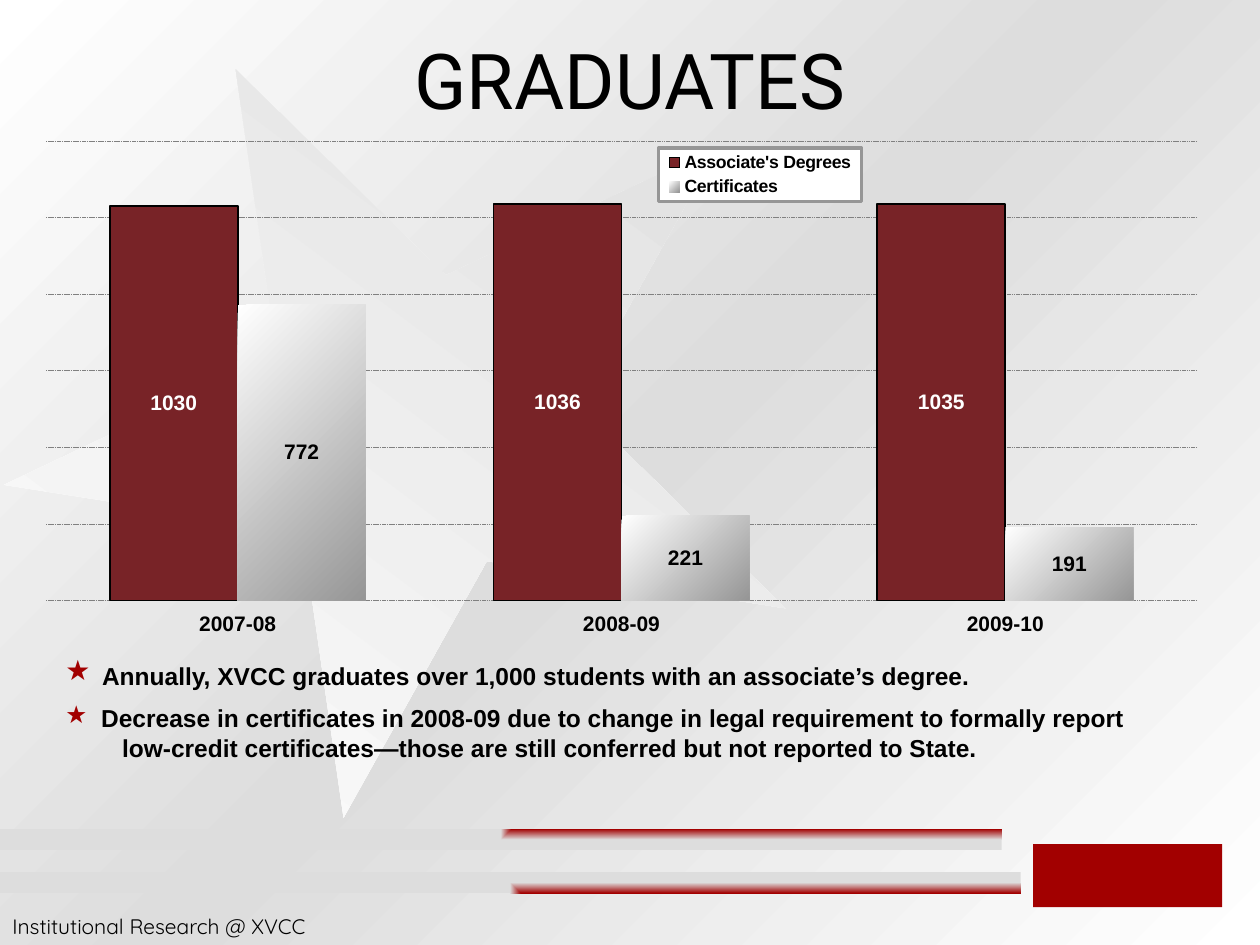
from pptx import Presentation
from pptx.chart.data import CategoryChartData
from pptx.dml.color import RGBColor
from pptx.enum.chart import (XL_CHART_TYPE, XL_LABEL_POSITION, XL_LEGEND_POSITION,
                             XL_TICK_LABEL_POSITION, XL_TICK_MARK)
from pptx.enum.dml import MSO_LINE
from pptx.enum.shapes import MSO_SHAPE
from pptx.enum.text import MSO_ANCHOR, PP_ALIGN
from pptx.oxml import parse_xml
from pptx.oxml.ns import nsdecls, qn
from pptx.util import Inches, Pt

COLUMN = XL_CHART_TYPE.COLUMN_CLUSTERED
CENTRE = XL_LABEL_POSITION.CENTER
RIGHT = XL_LEGEND_POSITION.RIGHT
LOW, BLANK = XL_TICK_LABEL_POSITION.LOW, XL_TICK_LABEL_POSITION.NONE
CROSS, NONE = XL_TICK_MARK.CROSS, XL_TICK_MARK.NONE
DASH = MSO_LINE.SQUARE_DOT
STAR, RECT = MSO_SHAPE.STAR_5_POINT, MSO_SHAPE.RECTANGLE
MIDDLE, MID, LEFT = MSO_ANCHOR.MIDDLE, PP_ALIGN.CENTER, PP_ALIGN.LEFT

COLS, ROWS = 100, 75
BLACK, WHITE, RED, WINE = "000000", "FFFFFF", "A20000", "782327"
PALE, GREY = "DDDDDD", "969696"


def rgb(code):
    return RGBColor.from_string(code)


def blend(node, tones, angle=45, focus=None):
    last = len(tones) - 1
    stops = "".join(f'<a:gs pos="{100000 * i // last}"><a:srgbClr val="{tone}"/></a:gs>'
                    for i, tone in enumerate(tones))
    way = f'<a:lin ang="{angle * 60000}" scaled="0"/>'
    if focus:
        sides = " ".join(f'{side}="{share * 1000}"' for side, share in zip("ltrb", focus))
        way = f'<a:path path="rect"><a:fillToRect {sides}/></a:path>'
    plain = next(node.iter(qn("a:solidFill")))
    plain.getparent().replace(plain, parse_xml(
        f'<a:gradFill {nsdecls("a")} rotWithShape="1"><a:gsLst>{stops}</a:gsLst>{way}</a:gradFill>'))


def layout(node, after, spot, inner=False):
    for old in node.findall(qn("c:layout")):
        node.remove(old)
    target = '<c:layoutTarget val="inner"/>' if inner else ""
    modes = '<c:xMode val="edge"/><c:yMode val="edge"/>'
    sizes = "".join(f'<c:{key} val="{val}"/>' for key, val in zip("xywh", spot))
    part = parse_xml(f'<c:layout {nsdecls("c")}><c:manualLayout>{target}{modes}{sizes}'
                     '</c:manualLayout></c:layout>')
    if after:
        node.find(qn(after)).addnext(part)
    else:
        node.insert(0, part)


class Deck:
    def __init__(self):
        self.show = Presentation()
        self.show.slide_width, self.show.slide_height = Inches(10), Inches(7.5)
        self.slide = self.show.slides.add_slide(self.show.slide_layouts[5])
        self.shapes = self.slide.shapes

    def box(self, x, y, w, h):
        col, row = self.show.slide_width / COLS, self.show.slide_height / ROWS
        return [round(n) for n in (x * col, y * row, w * col, h * row)]

    def style(self, font, size, tone=BLACK, face="Arial", bold=False):
        font.name, font.size, font.bold = face, Pt(size), bold
        font.color.rgb = rgb(tone)

    def run(self, para, words, *look, **more):
        piece = para.add_run()
        piece.text = words
        self.style(piece.font, *look, **more)

    def ground(self, *tones):
        self.slide.background.fill.solid()
        blend(self.slide.background._cSld, tones)

    def shape(self, kind, spot, tones, focus=None, turn=0):
        item = self.shapes.add_shape(kind, *self.box(*spot))
        item.shadow.inherit = False
        item.rotation = turn
        item.fill.solid()
        item.fill.fore_color.rgb = rgb(tones[0])
        if len(tones) > 1:
            blend(item._element.spPr, tones, focus=focus)
        item.line.fill.background()

    def text(self, spot):
        frame = self.shapes.add_textbox(*self.box(*spot)).text_frame
        frame.word_wrap = True
        return frame

    def title(self, spot, words, size, face):
        item = self.shapes.title
        item.left, item.top, item.width, item.height = self.box(*spot)
        item.text_frame.vertical_anchor = MIDDLE
        para = item.text_frame.paragraphs[0]
        para.alignment = MID
        self.run(para, words, size, face=face)
        self.shapes._spTree.append(item._element)

    def points(self, spot, rows):
        frame = self.text(spot)
        for i, (star, runs) in enumerate(rows):
            para = frame.paragraphs[0] if i == 0 else frame.add_paragraph()
            para.alignment = LEFT
            para.space_before = Pt(7 if star else 0)
            props = para._p.get_or_add_pPr()
            props.set("marL", str(Inches(0.23 if star else 0.45)))
            props.set("indent", str(Inches(-0.23 if star else 0)))
            if star:
                for xml in (f'<a:buClr {nsdecls("a")}><a:srgbClr val="{RED}"/></a:buClr>',
                            f'<a:buChar {nsdecls("a")} char="★"/>'):
                    props.append(parse_xml(xml))
            for words, size in runs:
                self.run(para, words, size, bold=True)

    def chart(self, spot, cats, series):
        data = CategoryChartData()
        data.categories = cats
        for name, vals in series:
            data.add_series(name, vals)
        chart = self.shapes.add_chart(COLUMN, *self.box(*spot), data).chart
        chart.has_title = False
        self.style(chart.font, 14.5)
        layout(chart._chartSpace.chart.plotArea, None, (0.012, 0.047, 0.964, 0.858), True)
        self.axes(chart)
        self.bars(chart.plots[0])
        self.legend(chart)

    def axes(self, chart):
        cat, val = chart.category_axis, chart.value_axis
        cat.tick_label_position, cat.major_tick_mark = LOW, CROSS
        self.style(cat.tick_labels.font, 12, bold=True)
        val.tick_label_position, val.major_tick_mark = BLANK, NONE
        val.minimum_scale, val.maximum_scale, val.major_unit = 0, 1200, 200
        for axis in (cat, val):
            axis.format.line.fill.background()
        line = val.major_gridlines.format.line
        line.color.rgb, line.width, line.dash_style = rgb("808080"), Pt(0.25), DASH

    def bars(self, plot):
        plot.gap_width, plot.overlap, plot.vary_by_categories = 100, 0, False
        for bar, tone in zip(plot.series, (WHITE, BLACK)):
            bar.invert_if_negative = False
            bar.format.fill.solid()
            bar.format.fill.fore_color.rgb = rgb(WINE)
            labels = bar.data_labels
            labels.show_value, labels.position = True, CENTRE
            self.style(labels.font, 12, tone, bold=True)
        first, second = plot.series
        first.format.line.color.rgb, first.format.line.width = rgb(BLACK), Pt(1)
        second.format.line.fill.background()
        blend(second._element.find(qn("c:spPr")), (WHITE, GREY))

    def legend(self, chart):
        chart.has_legend = True
        key = chart.legend
        key.position, key.include_in_layout = RIGHT, False
        self.style(key.font, 10.1, bold=True)
        node = key._element
        layout(node, "c:legendPos", (0.525, 0.06, 0.17, 0.1))
        node.find(qn("c:overlay")).addnext(parse_xml(
            f'<c:spPr {nsdecls("c", "a")}><a:solidFill><a:srgbClr val="{WHITE}"/></a:solidFill>'
            f'<a:ln w="{Pt(2)}"><a:solidFill><a:srgbClr val="{GREY}"/></a:solidFill></a:ln></c:spPr>'))


def main():
    deck = Deck()
    deck.ground(WHITE, PALE, WHITE)
    deck.shape(STAR, (0, 4.2, 60, 60), (WHITE, PALE), turn=261.8)
    foot = deck.text((0, 72, 40, 3)).paragraphs[0]
    deck.run(foot, "Institutional Research @ XVCC", 12, face="Quicksand")
    deck.shape(RECT, (82, 67, 15, 5), (RED,))
    for top, wide, focus in ((69.2, 81, (100, 100, 0, 0)), (65.8, 79.5, (100, 0, 0, 100))):
        deck.shape(RECT, (0, top, wide, 1.7), (RED, PALE), focus)
    deck.title((5, 0, 90, 12.5), "GRADUATES", 44, "Roboto")
    deck.points((4.2, 51.7, 89.2, 9.6), (
        (True, ((" ", 16),
                ("Annually, XVCC graduates over 1,000 students with an associate’s degree.", 14))),
        (True, ((" Decrease in certificates in 2008-09 due to change in legal requirement "
                 "to formally report", 14),)),
        (False, (("low-credit certificates—those are still conferred but not reported to State.",
                  14),))))
    deck.chart((2.5, 9.2, 94.8, 42.5), ("2007-08", "2008-09", "2009-10"), (
        ("Associate's Degrees", (1030, 1036, 1035)), ("Certificates", (772, 221, 191))))
    deck.show.save("out.pptx")


if __name__ == "__main__":
    main()
